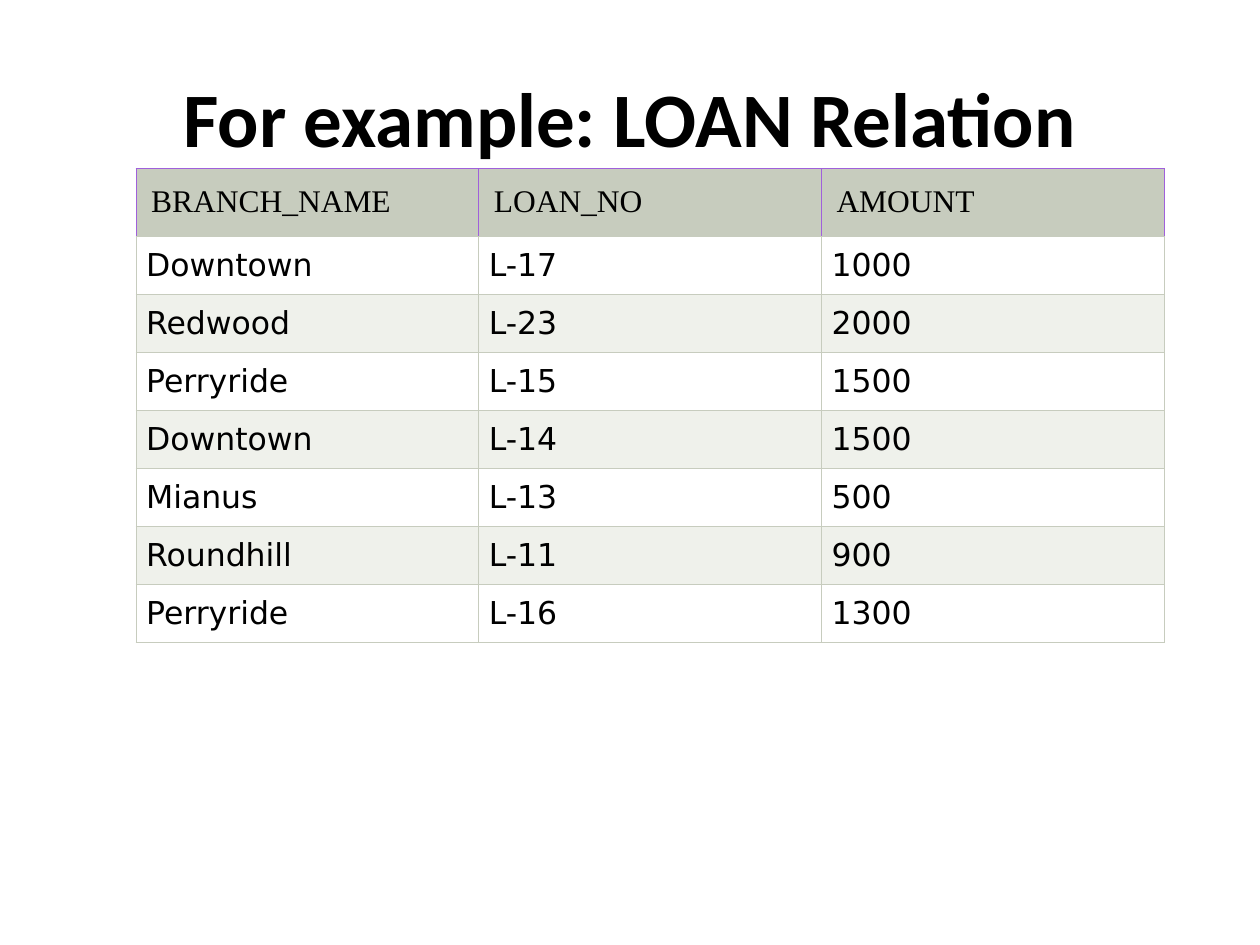
import pptx
import pptx.util
import pptx.dml.color
import pptx.enum.text
import pptx.oxml
import pptx.oxml.ns

Inches, Pt = pptx.util.Inches, pptx.util.Pt
RGB = pptx.dml.color.RGBColor

TITLE = "For example: LOAN Relation"
HEAD = ("BRANCH_NAME", "LOAN_NO", "AMOUNT")
LOANS = [
    ("Downtown", "L-17", "1000"),
    ("Redwood", "L-23", "2000"),
    ("Perryride", "L-15", "1500"),
    ("Downtown", "L-14", "1500"),
    ("Mianus", "L-13", "500"),
    ("Roundhill", "L-11", "900"),
    ("Perryride", "L-16", "1300"),
]

BLACK = RGB(0, 0, 0)
WHITE = RGB(255, 255, 255)
SAGE = RGB(0xC7, 0xCC, 0xBE)
PALE = RGB(0xEF, 0xF1, 0xEB)
PURPLE = RGB(0xA0, 0x60, 0xDB)

LEFT, TOP, COL = 1.08, 1.34, 2.72
HEAD_ROW, ROW = 0.52, 0.45


def add_run(para, text, font, size, bold=False):
    run = para.add_run()
    run.text = text
    run.font.name, run.font.size, run.font.bold = font, Pt(size), bold
    run.font.color.rgb = BLACK


def set_edges(cell, edges):
    """Put 0.75 pt borders, given as (side, colour) in L, R, T, B order."""
    props = cell._tc.get_or_add_tcPr()
    for spot, (side, color) in enumerate(edges):
        props.insert(spot, pptx.oxml.parse_xml(
            f'<a:ln{side} {pptx.oxml.ns.nsdecls("a")} w="{Pt(0.75)}">'
            f'<a:solidFill><a:srgbClr val="{color}"/></a:solidFill></a:ln{side}>'))


def fill_cell(cell, text, font, inset, fill, edge):
    cell.margin_left = cell.margin_right = Inches(inset)
    cell.margin_top = cell.margin_bottom = Inches(inset)
    cell.fill.solid()
    cell.fill.fore_color.rgb = fill
    set_edges(cell, [("L", edge), ("R", edge), ("T", edge), ("B", SAGE)])
    add_run(cell.text_frame.paragraphs[0], text, font, 18)


def add_title(slide):
    frame = slide.shapes.add_textbox(
        Inches(0.5), Inches(0.3), Inches(9), Inches(1.25)).text_frame
    frame.word_wrap = True
    frame.vertical_anchor = pptx.enum.text.MSO_ANCHOR.MIDDLE
    para = frame.paragraphs[0]
    para.alignment = pptx.enum.text.PP_ALIGN.CENTER
    add_run(para, TITLE, "Calibri", 44, True)


def add_loans(slide):
    rows, cols = len(LOANS) + 1, len(HEAD)
    table = slide.shapes.add_table(
        rows, cols, Inches(LEFT), Inches(TOP),
        Inches(COL * cols), Inches(HEAD_ROW + ROW * len(LOANS))).table
    for col in table.columns:
        col.width = Inches(COL)
    for r, texts in enumerate([HEAD] + LOANS):
        table.rows[r].height = Inches(ROW if r else HEAD_ROW)
        if r == 0:
            style = ("Times New Roman", 0.12, SAGE, PURPLE)
        else:
            style = ("DejaVu Sans", 0.08, WHITE if r % 2 else PALE, SAGE)
        for c, text in enumerate(texts):
            fill_cell(table.cell(r, c), text, *style)


def main():
    deck = pptx.Presentation()
    deck.slide_width, deck.slide_height = Inches(10), Inches(7.5)
    slide = deck.slides.add_slide(deck.slide_layouts[6])
    add_title(slide)
    add_loans(slide)
    deck.save("out.pptx")


if __name__ == "__main__":
    main()
